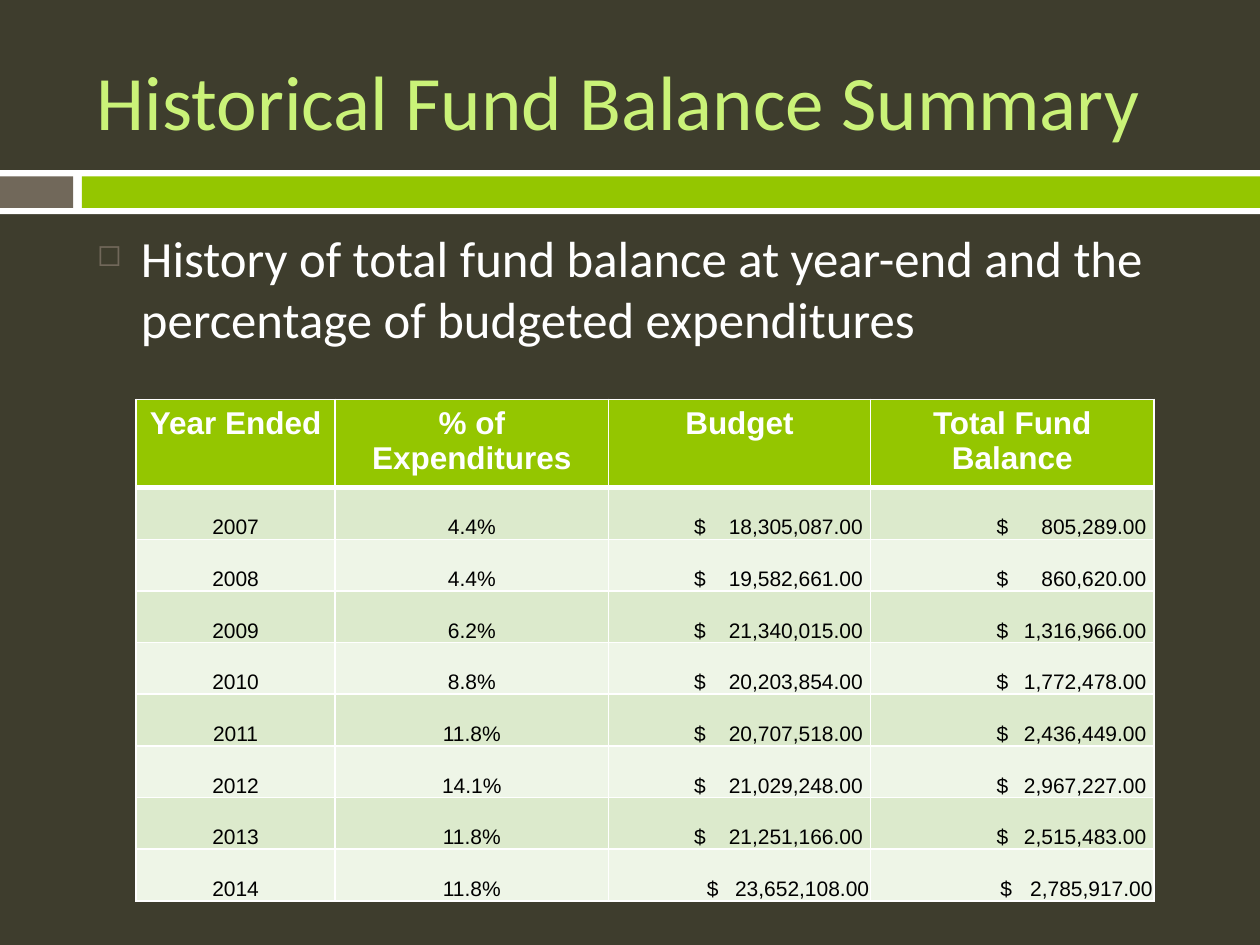
from lxml.etree import SubElement
from pptx import Presentation
from pptx.dml.color import RGBColor
from pptx.enum.shapes import MSO_SHAPE
from pptx.enum.text import MSO_ANCHOR, PP_ALIGN
from pptx.oxml.ns import qn
from pptx.util import Inches, Pt

OLIVE = RGBColor(0x3E, 0x3D, 0x2D)
WHITE = RGBColor(0xFF, 0xFF, 0xFF)
BLACK = RGBColor(0, 0, 0)
TAUPE = RGBColor(0x71, 0x68, 0x5A)
GREEN = RGBColor(0x94, 0xC6, 0x00)
LIME = RGBColor(0xCA, 0xF2, 0x78)
BANDS = (RGBColor(0xDC, 0xEA, 0xCC), RGBColor(0xEE, 0xF5, 0xE7))

COLUMN_WIDTHS = (1.58, 2.17, 2.08, 2.25)
HEADINGS = ("Year Ended", "% of Expenditures", "Budget", "Total Fund Balance")
BALANCES = (
    ("2007", "4.4%", "18,305,087.00", "805,289.00"),
    ("2008", "4.4%", "19,582,661.00", "860,620.00"),
    ("2009", "6.2%", "21,340,015.00", "1,316,966.00"),
    ("2010", "8.8%", "20,203,854.00", "1,772,478.00"),
    ("2011", "11.8%", "20,707,518.00", "2,436,449.00"),
    ("2012", "14.1%", "21,029,248.00", "2,967,227.00"),
    ("2013", "11.8%", "21,251,166.00", "2,515,483.00"),
    ("2014", "11.8%", "23,652,108.00", "2,785,917.00"),
)
MONEY_SPANS = {2: (0.68, 2.02), 3: (1.0, 2.19)}
LAST_MONEY_SPANS = {2: (0.78, 2.07), 3: (1.03, 2.24)}


class FundSlide:
    """Holds the style and the current slide, and draws each kind of element."""

    heading_font = "Calibri"
    table_font = "Arial"

    def __init__(self, presentation):
        self.slide = presentation.slides.add_slide(presentation.slide_layouts[6])
        self.slide.background.fill.solid()
        self.slide.background.fill.fore_color.rgb = OLIVE

    def style(self, paragraph, font, size, color, bold=False):
        paragraph.font.name = font
        paragraph.font.size = Pt(size)
        paragraph.font.color.rgb = color
        paragraph.font.bold = bold

    def bar(self, left, top, width, height, color):
        bar = self.slide.shapes.add_shape(
            MSO_SHAPE.RECTANGLE, Inches(left), Inches(top), Inches(width), Inches(height))
        bar.shadow.inherit = False
        bar.fill.solid()
        bar.fill.fore_color.rgb = color
        bar.line.fill.background()

    def text(self, top, height, words, size, color, anchor=MSO_ANCHOR.TOP, bullet=None):
        box = self.slide.shapes.add_textbox(
            Inches(0.67), Inches(top), Inches(8.92), Inches(height))
        frame = box.text_frame
        frame.word_wrap = True
        frame.vertical_anchor = anchor
        frame.text = words
        paragraph = frame.paragraphs[0]
        if bullet:
            self.bullet(paragraph, bullet)
        self.style(paragraph, self.heading_font, size, color)

    def bullet(self, paragraph, symbol):
        paragraph.space_before = Pt(7)
        properties = paragraph._p.get_or_add_pPr()
        properties.set("marL", str(Inches(0.35)))
        properties.set("indent", str(-Inches(0.35)))
        tint = SubElement(properties, qn("a:buClr"))
        SubElement(tint, qn("a:srgbClr"), val=str(TAUPE))
        SubElement(properties, qn("a:buSzPct"), val="60000")
        SubElement(properties, qn("a:buChar"), char=symbol)

    def borders(self, cell, bottom):
        properties = cell._tc.get_or_add_tcPr()
        for side, width in (("L", 1), ("R", 1), ("T", 1), ("B", bottom)):
            edge = SubElement(properties, qn(f"a:ln{side}"), w=str(Pt(width)))
            fill = SubElement(edge, qn("a:solidFill"))
            SubElement(fill, qn("a:srgbClr"), val=str(WHITE))

    def cell(self, cell, words, fill, size, color, bold=False, bottom=1, span=None):
        self.borders(cell, bottom)
        cell.fill.solid()
        cell.fill.fore_color.rgb = fill
        cell.text = f"$\t{words}" if span else words
        paragraph = cell.text_frame.paragraphs[0]
        paragraph.alignment = PP_ALIGN.LEFT if span else PP_ALIGN.CENTER
        if not bold:
            cell.vertical_anchor = MSO_ANCHOR.BOTTOM
            cell.margin_left = cell.margin_right = cell.margin_top = Inches(0.01)
            cell.margin_bottom = 0
        if span:
            start, end = span
            cell.margin_left = Inches(start)
            stops = SubElement(paragraph._p.get_or_add_pPr(), qn("a:tabLst"))
            SubElement(stops, qn("a:tab"), pos=str(Inches(end - start)), algn="r")
        self.style(paragraph, self.table_font, size, color, bold)

    def table(self, left, top, headings, records):
        header_height, row_height = 0.43, 0.41
        table = self.slide.shapes.add_table(
            len(records) + 1, len(headings), Inches(left), Inches(top),
            Inches(sum(COLUMN_WIDTHS)),
            Inches(header_height + row_height * len(records))).table
        for column, width in zip(table.columns, COLUMN_WIDTHS):
            column.width = Inches(width)
        for row in table.rows:
            row.height = Inches(row_height)
        table.rows[0].height = Inches(header_height)
        for column, heading in enumerate(headings):
            self.cell(table.cell(0, column), heading, GREEN, 18, WHITE, bold=True, bottom=3)
        for row, record in enumerate(records):
            spans = LAST_MONEY_SPANS if row == len(records) - 1 else MONEY_SPANS
            for column, words in enumerate(record):
                self.cell(table.cell(row + 1, column), words, BANDS[row % 2], 12, BLACK,
                          bottom=1, span=spans.get(column))


def main():
    presentation = Presentation()
    presentation.slide_width = Inches(10)
    presentation.slide_height = Inches(7.5)
    summary = FundSlide(presentation)
    summary.bar(0, 1.35, 10, 0.35, WHITE)
    summary.bar(0, 1.4, 0.58, 0.25, TAUPE)
    summary.bar(0.65, 1.4, 9.35, 0.25, GREEN)
    summary.text(0.25, 1.08, "Historical Fund Balance Summary", 44, LIME, MSO_ANCHOR.MIDDLE)
    summary.text(
        1.75, 4.92,
        "History of total fund balance at year-end and the percentage of budgeted expenditures",
        29, WHITE, bullet="◻")
    summary.table(1.08, 3.17, HEADINGS, BALANCES)
    presentation.save("out.pptx")


if __name__ == "__main__":
    main()
